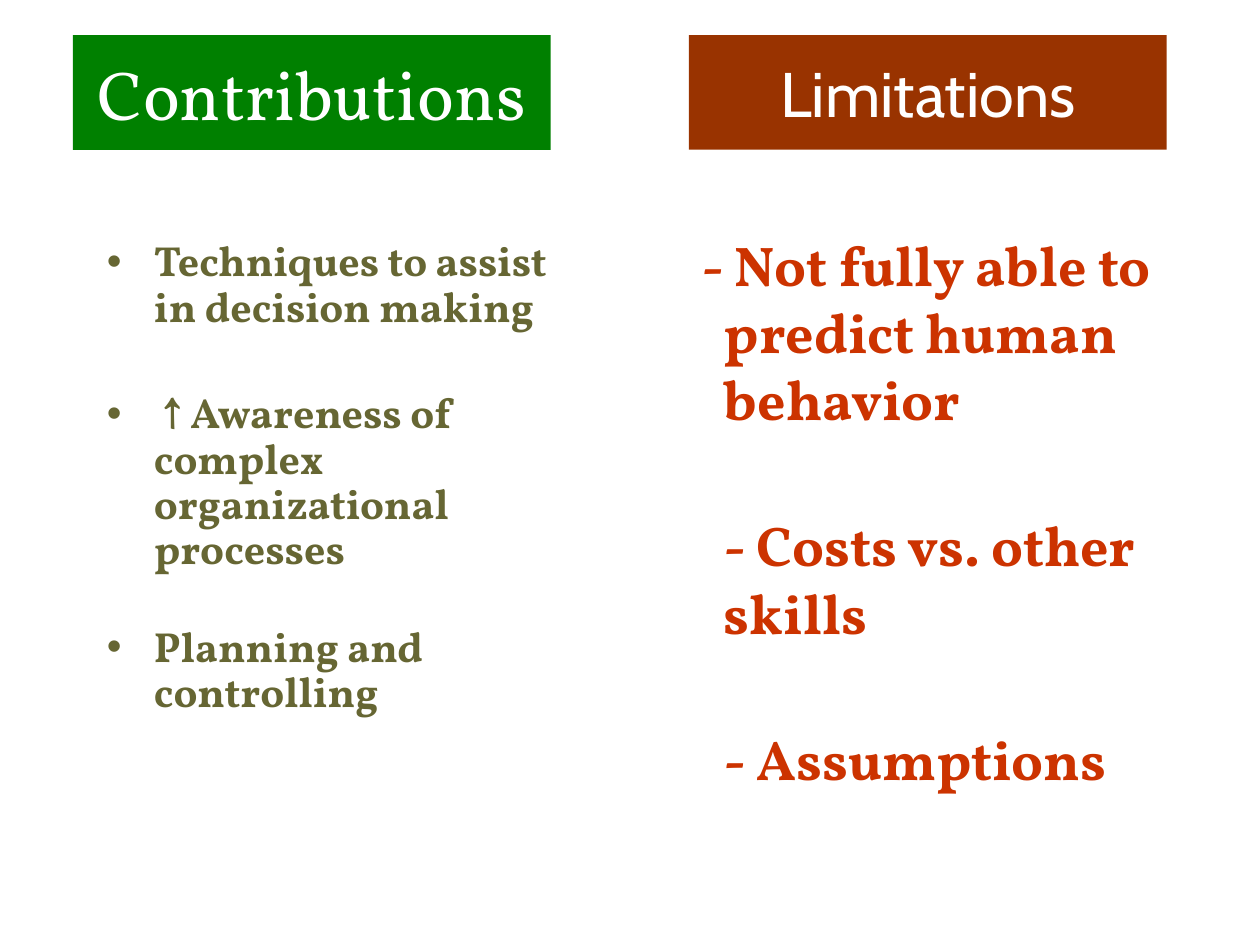
import lxml.etree
import pptx
import pptx.dml.color
import pptx.enum.shapes
import pptx.enum.text
import pptx.oxml.ns
import pptx.util

Cm, Pt = pptx.util.Cm, pptx.util.Pt
RGBColor = pptx.dml.color.RGBColor

WHITE = RGBColor(0xFF, 0xFF, 0xFF)
GREEN = RGBColor(0x00, 0x80, 0x00)
BROWN = RGBColor(0x99, 0x33, 0x00)
OLIVE = RGBColor(0x66, 0x66, 0x33)
RED = RGBColor(0xCC, 0x33, 0x00)
SERIF, SANS = "Vollkorn", "Cabin"

HEADING_TOP, HEADING_WIDTH, HEADING_HEIGHT = Cm(0.71), Cm(9.63), Cm(2.31)
LEFT_COLUMN, RIGHT_COLUMN = Cm(1.47), Cm(13.89)

CONTRIBUTIONS = [
    "Techniques to assist in decision making",
    " ↑ Awareness of complex organizational processes",
    "Planning and controlling",
]
LIMITATIONS = [
    "- Not fully able to predict human behavior",
    "- Costs vs. other skills",
    "- Assumptions",
]


def place(shape, left, top, width, height):
    shape.left, shape.top, shape.width, shape.height = left, top, width, height


def style_runs(para, font_name, size, color, bold):
    for span in para.runs:
        span.font.name = font_name
        span.font.size = Pt(size)
        span.font.color.rgb = color
        span.font.bold = bold


def set_indent(para, margin, first_line, bullet=None):
    """Set the hanging indent in cm, and the bullet character or none."""
    props = para._p.get_or_add_pPr()
    props.set("marL", str(Cm(margin)))
    props.set("indent", str(Cm(first_line)))
    tag = "a:buChar" if bullet else "a:buNone"
    mark = lxml.etree.SubElement(props, pptx.oxml.ns.qn(tag))
    if bullet:
        mark.set("char", bullet)


def fill_heading(shape, left, text, fill, font_name, size):
    place(shape, left, HEADING_TOP, HEADING_WIDTH, HEADING_HEIGHT)
    shape.fill.solid()
    shape.fill.fore_color.rgb = fill
    shape.line.fill.background()
    frame = shape.text_frame
    frame.text = text
    frame.word_wrap = True
    frame.auto_size = pptx.enum.text.MSO_AUTO_SIZE.NONE
    frame.vertical_anchor = pptx.enum.text.MSO_ANCHOR.MIDDLE
    para = frame.paragraphs[0]
    para.alignment = pptx.enum.text.PP_ALIGN.CENTER
    style_runs(para, font_name, size, WHITE, False)


def fill_list(box, items, size, color, line_spacing, gaps):
    """Write the items with the given space, in points, before each."""
    frame = box.text_frame
    frame.text = "\n".join(items)
    frame.word_wrap = True
    frame.auto_size = pptx.enum.text.MSO_AUTO_SIZE.NONE
    for para, gap in zip(frame.paragraphs, gaps):
        para.line_spacing = line_spacing
        para.space_before = Pt(gap)
        style_runs(para, SERIF, size, color, True)
    return frame.paragraphs


def add_contributions(page, left):
    fill_heading(page.shapes.title, left, "Contributions", GREEN, SERIF, 39.6)
    box = page.placeholders[1]
    place(box, left + Cm(0.43), Cm(4.72), Cm(9.4), Cm(12.19))
    for para in fill_list(box, CONTRIBUTIONS, 24, OLIVE, 0.9, (0, 35, 30)):
        set_indent(para, 0.95, -0.95, "•")


def add_limitations(page, left):
    box = page.placeholders[2]
    place(box, left, Cm(4.52), Cm(10), Cm(12.19))
    paras = fill_list(box, LIMITATIONS, 32, RED, 1.0, (0, 45, 45))
    for para, first_line in zip(paras, (-0.45, 0, 0)):
        set_indent(para, 0.45, first_line)
    heading = page.shapes.add_shape(
        pptx.enum.shapes.MSO_SHAPE.RECTANGLE,
        left, HEADING_TOP, HEADING_WIDTH, HEADING_HEIGHT)
    heading.shadow.inherit = False
    fill_heading(heading, left, "Limitations", BROWN, SANS, 36)


def main():
    deck = pptx.Presentation()
    deck.slide_width, deck.slide_height = Cm(25.4), Cm(19.05)
    two_content = deck.slide_layouts.get_by_name("Two Content")
    page = deck.slides.add_slide(two_content)
    add_contributions(page, LEFT_COLUMN)
    add_limitations(page, RIGHT_COLUMN)
    for box in list(page.placeholders):
        if not box.text_frame.text:
            box._element.getparent().remove(box._element)
    deck.save("out.pptx")


if __name__ == "__main__":
    main()
